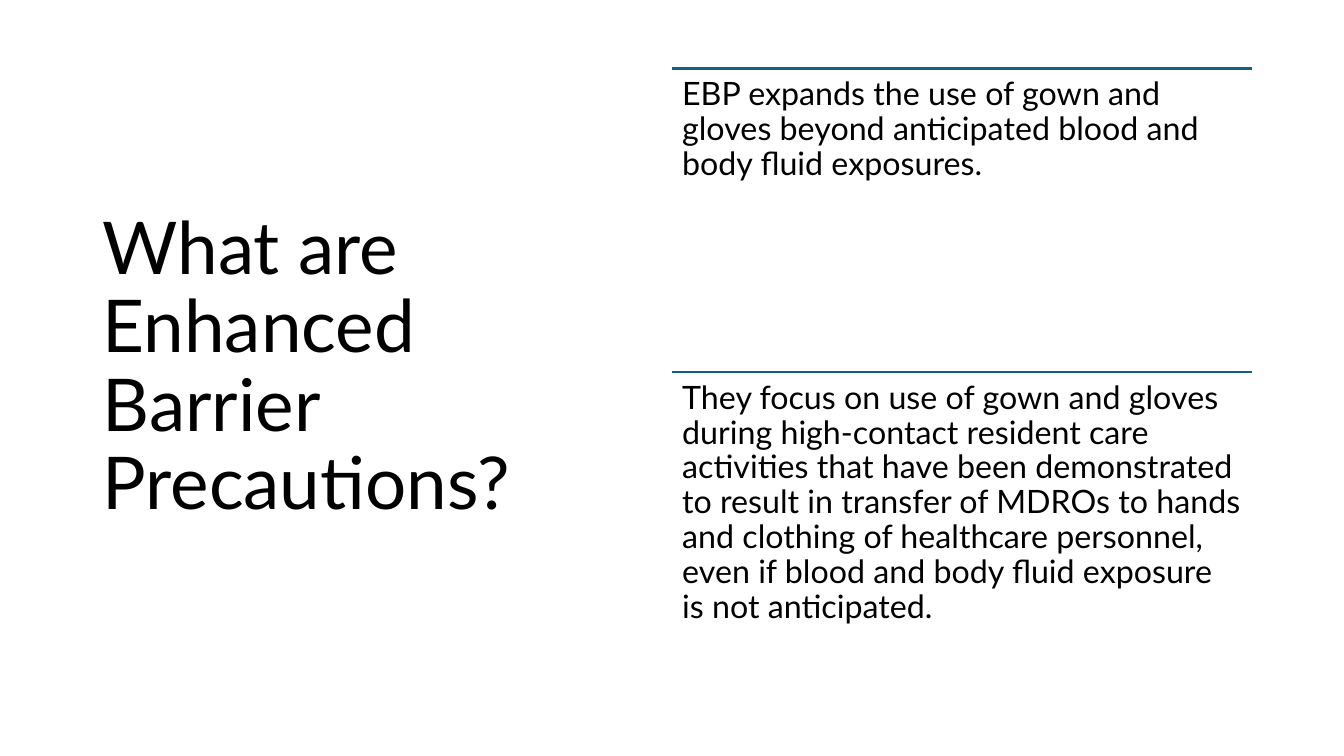
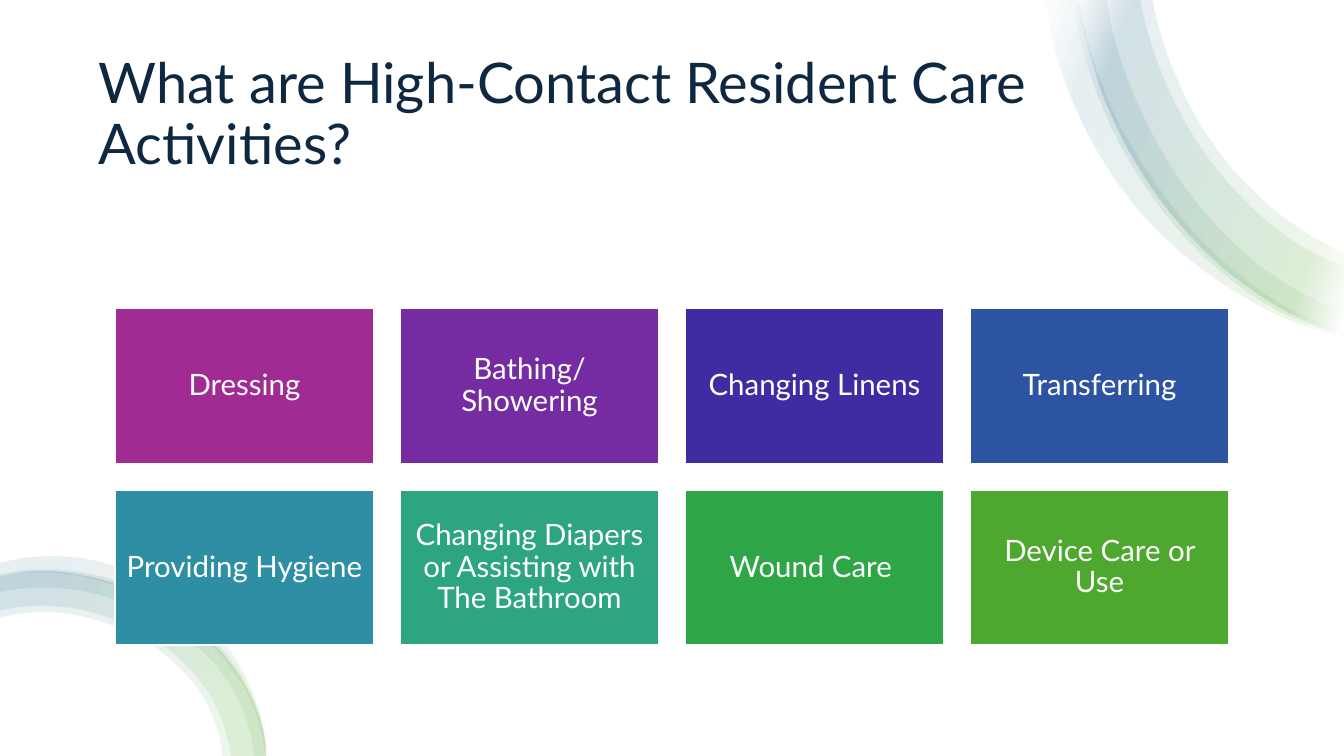
from math import dist

from lxml import etree
from pptx import Presentation
from pptx.dml.color import RGBColor
from pptx.enum.shapes import MSO_CONNECTOR, MSO_SHAPE
from pptx.enum.text import MSO_ANCHOR, PP_ALIGN
from pptx.oxml.ns import qn
from pptx.util import Inches, Pt

STRAIGHT = MSO_CONNECTOR.STRAIGHT
RECT = MSO_SHAPE.RECTANGLE
TOP, MIDDLE = MSO_ANCHOR.TOP, MSO_ANCHOR.MIDDLE
LEFT, CENTER = PP_ALIGN.LEFT, PP_ALIGN.CENTER

WIDE, HIGH = 13.33, 7.5
FONT = "Lato"
BLACK, WHITE, NAVY = "000000", "FFFFFF", "0E2841"
TEAL, GREEN = "156082", "4EA72E"
FADE = [(2, WHITE), (16, GREEN), (85, TEAL), (100, WHITE)]
ALPHA = 10

POINTS = [
    "EBP expands the use of gown and gloves beyond anticipated blood and "
    "body fluid exposures.",
    "They focus on use of gown and gloves during high-contact resident care "
    "activities that have been demonstrated to result in transfer of MDROs "
    "to hands and clothing of healthcare personnel, even if blood and body "
    "fluid exposure is not anticipated.",
]

CARDS = [
    ("Dressing", "A02B93"),
    ("Bathing/Showering", "752BA1"),
    ("Changing Linens", "3D2CA2"),
    ("Transferring", "2C54A3"),
    ("Providing Hygiene", "2D8EA4"),
    ("Changing Diapers or Assisting with The Bathroom", "2DA581"),
    ("Wound Care ", "2EA648"),
    ("Device Care or Use", GREEN),
]
COLS = 4

# Each band is a pair of edges; a smooth curve runs through the knots of each.
ARC = [(13.33, 3.32), (13.09, 3.24), (12.23, 2.74), (11.52, 2),
       (10.99, 1.07), (10.69, 0.04), (10.68, 0)]
CORNER = [
    ([(13.33, 3.35), (12.82, 3.19), (12.21, 2.87), (11.65, 2.45),
      (11.16, 1.92), (10.78, 1.31), (10.41, 0.26), (10.37, 0)],
     [(10.7, 0), (10.82, 0.52), (11.06, 1.15), (11.4, 1.73),
      (11.81, 2.27), (12.3, 2.73), (12.86, 3.1), (13.33, 3.28)]),
    (ARC, [(11.43, 0), (11.58, 0.55), (12.19, 1.64), (13.07, 2.38),
           (13.33, 2.51)]),
    ([(13.33, 3.33), (12.79, 3.14), (11.73, 2.33), (11.32, 1.79),
      (10.99, 1.19), (10.68, 0.2), (10.65, 0)],
     [(10.98, 0), (11.07, 0.44), (11.29, 1.04), (11.95, 2.11),
      (12.39, 2.55), (12.9, 2.9), (13.33, 3.08)]),
    (ARC, [(11.31, 0), (11.47, 0.59), (12.1, 1.72), (13.01, 2.5),
           (13.33, 2.64)]),
]
BEND = [(2.63, 7.5), (2.62, 7.35), (2.36, 6.69), (1.85, 6.16),
        (1.17, 5.8), (0.4, 5.67), (0, 5.72)]
FOOT = [
    (BEND, [(0, 6.13), (0.4, 6.07), (1.07, 6.19), (1.66, 6.52),
            (2.06, 7), (2.2, 7.5)]),
    (BEND, [(0, 6.06), (0.4, 6.01), (1.09, 6.13), (1.7, 6.47),
            (2.12, 6.97), (2.28, 7.5)]),
    ([(2.63, 7.5), (2.59, 7.19), (2.47, 6.85), (2.03, 6.27),
      (1.42, 5.87), (0.69, 5.67), (0.31, 5.66), (0, 5.71)],
     [(0, 5.88), (0.33, 5.84), (0.67, 5.85), (1.34, 6.03),
      (1.92, 6.39), (2.34, 6.91), (2.51, 7.5)]),
    ([(2.64, 7.5), (2.5, 6.87), (2.1, 6.23), (1.48, 5.75),
      (0.71, 5.53), (0.31, 5.53), (0, 5.59)],
     [(0, 5.72), (0.32, 5.68), (0.69, 5.7), (1.22, 5.84),
      (1.71, 6.09), (2.25, 6.58), (2.52, 7.05), (2.62, 7.5)]),
]


def color(code):
    return RGBColor.from_string(code)


def assign(item, **values):
    for name, value in values.items():
        setattr(item, name, value)


def write(shape, text, size, ink, inset=None, anchor=TOP, align=LEFT):
    """Set the text; the inset, in points, follows its size by default."""
    side, cap = map(Pt, inset or (size * 0.3, size * 0.3))
    frame = shape.text_frame
    assign(frame, word_wrap=True, vertical_anchor=anchor, margin_left=side,
           margin_right=side, margin_top=cap, margin_bottom=cap)
    para = frame.paragraphs[0]
    assign(para, text=text, alignment=align, line_spacing=0.9)
    assign(para.font, name=FONT, size=Pt(size))
    para.font.color.rgb = color(ink)


def add_text(slide, place, text, size, ink, **style):
    box = slide.shapes.add_textbox(*map(Inches, place))
    write(box, text, size, ink, **style)


def add_title(slide, place, text, size, ink):
    add_text(slide, place, text, size, ink, inset=(7.2, 3.6), anchor=MIDDLE)


def add_rule(slide, left, top, width):
    ends = map(Inches, (left, top, left + width, top))
    rule = slide.shapes.add_connector(STRAIGHT, *ends)
    rule.line.width = Pt(1.5)
    rule.line.color.rgb = color(TEAL)
    etree.SubElement(rule._element.spPr, qn("a:effectLst"))


def add_rect(slide, place, fill):
    rect = slide.shapes.add_shape(RECT, *map(Inches, place))
    rect.shadow.inherit = False
    rect.fill.solid()
    rect.fill.fore_color.rgb = color(fill)
    rect.line.fill.background()
    return rect


def add_card(slide, place, text, fill):
    card = add_rect(slide, place, fill)
    card.line.width = Pt(1.5)
    card.line.color.rgb = color(WHITE)
    write(card, text, 21, WHITE, anchor=MIDDLE, align=CENTER)


def handles(knots):
    """Give the two control points of each cubic through the knots."""
    gaps = [dist(a, b) for a, b in zip(knots, knots[1:])]
    slopes = [[(q - p) / gap for p, q in zip(a, b)]
              for a, b, gap in zip(knots, knots[1:], gaps)]
    inner = [[(p * h + q * g) / (g + h) for p, q in zip(s, t)]
             for s, t, g, h in zip(slopes, slopes[1:], gaps, gaps[1:])]
    first = [2 * s - m for s, m in zip(slopes[0], inner[0])]
    last = [2 * s - m for s, m in zip(slopes[-1], inner[-1])]
    turns = [first, *inner, last]
    return [([p + m * gap / 3 for p, m in zip(a, s)],
             [q - m * gap / 3 for q, m in zip(b, t)])
            for a, b, s, t, gap in zip(knots, knots[1:], turns, turns[1:],
                                       gaps)]


def bend(shape, pairs):
    """Turn line segments into cubics where control points are given."""
    lines = shape._element.spPr.findall(".//" + qn("a:lnTo"))
    for line, pair in zip(lines, pairs):
        if pair:
            line.tag = qn("a:cubicBezTo")
            for index, (x, y) in enumerate(pair):
                spot = etree.Element(qn("a:pt"),
                                     x=str(Inches(x) - shape.left),
                                     y=str(Inches(y) - shape.top))
                line.insert(index, spot)


def fade(shape, tints, angle):
    """Fill with a see-through gradient."""
    shape.fill.gradient()
    shape.fill.gradient_angle = angle
    stops = shape._element.spPr.find(".//" + qn("a:gsLst"))
    for stop in list(stops):
        stops.remove(stop)
    for place, code in tints:
        stop = etree.SubElement(stops, qn("a:gs"), pos=str(place * 1000))
        tint = etree.SubElement(stop, qn("a:srgbClr"), val=code)
        etree.SubElement(tint, qn("a:alpha"), val=str(ALPHA * 1000))


def add_band(slide, outer, inner, tints, angle):
    dots = [(Inches(x), Inches(y)) for x, y in outer + inner]
    pen = slide.shapes.build_freeform(*dots[0])
    pen.add_line_segments(dots[1:], close=True)
    band = pen.convert_to_shape()
    band.shadow.inherit = False
    band.line.fill.background()
    bend(band, [*handles(outer), None, *handles(inner)])
    fade(band, tints, angle)


def build_intro(slide):
    add_title(slide, (0.92, 0.61, 5.32, 6.09),
              "What are Enhanced Barrier Precautions?", 52, BLACK)
    left, width, height = 6.67, 5.75, 3.01
    for row, text in enumerate(POINTS):
        top = 0.68 + row * height
        add_rule(slide, left, top, width)
        add_text(slide, (left, top, width, height), text, 23, BLACK)


def build_cards(slide):
    add_rect(slide, (0, 0, WIDE, HIGH), WHITE)
    add_title(slide, (0.88, 0.5, 11.57, 1.3),
              "What are High-Contact Resident Care Activities?", 40, NAVY)
    for bands, tints, angle in ((CORNER, FADE, 160), (FOOT, FADE[1:3], 155)):
        for outer, inner in bands:
            add_band(slide, outer, inner, tints, angle)
    width = 2.57
    height, gap = width * 0.6, width * 0.1
    for index, (text, fill) in enumerate(CARDS):
        row, col = divmod(index, COLS)
        place = (1.14 + col * (width + gap), 3.06 + row * (height + gap),
                 width, height)
        add_card(slide, place, text, fill)


def main():
    deck = Presentation()
    assign(deck, slide_width=Inches(WIDE), slide_height=Inches(HIGH))
    blank = deck.slide_layouts[6]
    for build in (build_intro, build_cards):
        build(deck.slides.add_slide(blank))
    deck.save("out.pptx")


if __name__ == "__main__":
    main()
